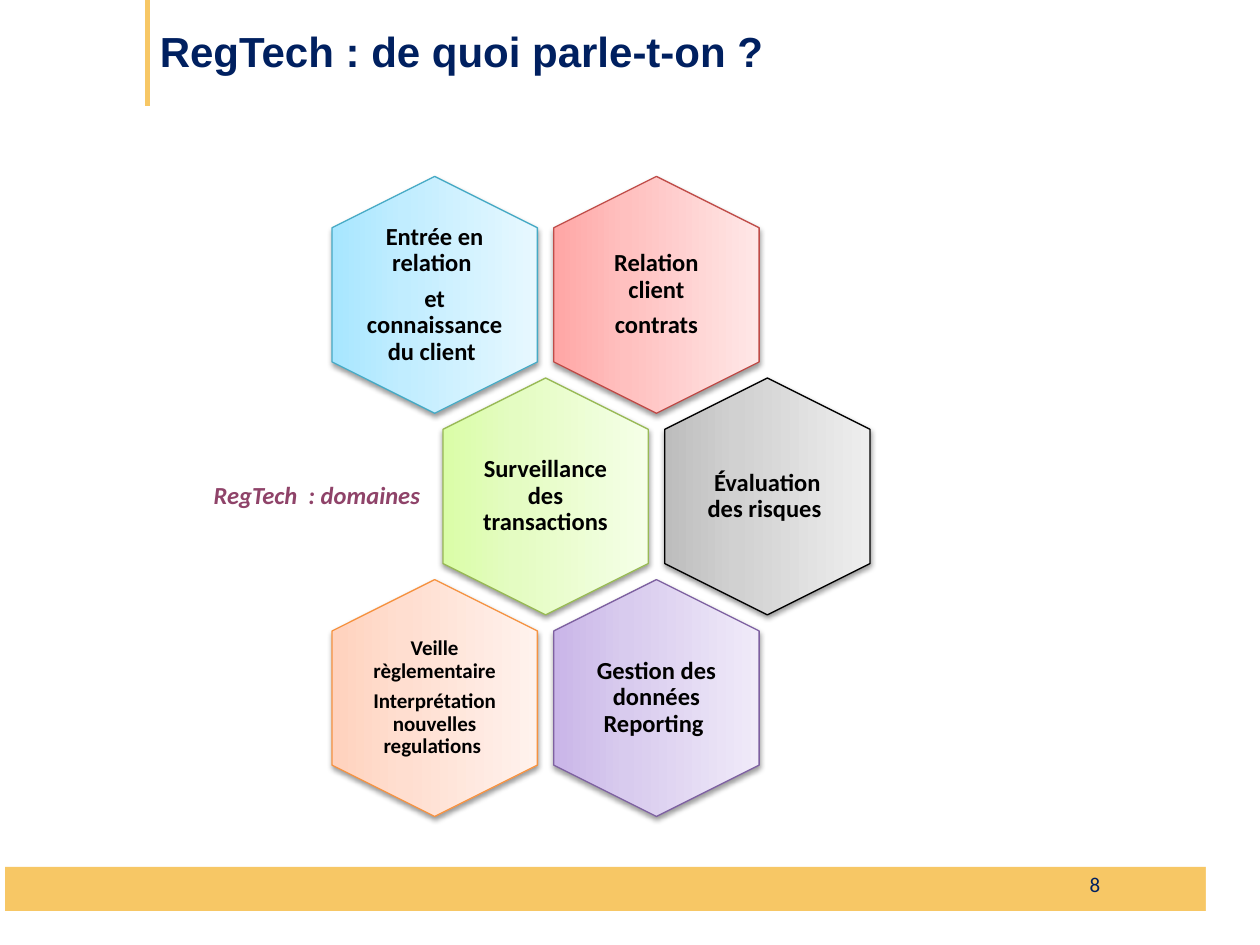
from dataclasses import dataclass

from lxml import etree
from pptx import Presentation
from pptx import util as u
from pptx.dml.color import RGBColor
from pptx.enum import shapes, text
from pptx.oxml import parse_xml
from pptx.oxml.ns import nsdecls, qn


@dataclass(frozen=True)
class Theme:
    gold: str = "F7C765"
    navy: str = "002060"
    plum: str = "8F4369"
    black: str = "000000"
    white: str = "FFFFFF"
    title_font: str = "Arial"
    body_font: str = "Calibri"
    title_size: int = 24
    body_size: int = 14
    small_size: int = 12


class SlideBuilder:
    def __init__(self, slide, theme):
        self.slide = slide
        self.theme = theme

    def rectangle(self, left, top, width, height, color):
        shape = self.slide.shapes.add_shape(
            shapes.MSO_SHAPE.RECTANGLE, *map(u.Inches, (left, top, width, height)))
        shape.shadow.inherit = False
        shape.fill.solid()
        shape.fill.fore_color.rgb = RGBColor.from_string(color)
        shape.line.fill.background()

    def line(self, start, end, color, weight):
        connector = self.slide.shapes.add_connector(
            shapes.MSO_CONNECTOR.STRAIGHT, *map(u.Inches, start + end))
        connector.line.color.rgb = RGBColor.from_string(color)
        connector.line.width = u.Pt(weight)
        etree.SubElement(connector._element.spPr, qn("a:effectLst"))

    def text_box(self, left, top, width, height, paragraphs, size, color,
                 align=text.PP_ALIGN.LEFT, font=None, bold=False, italic=False,
                 inset=None, spacing=None, after=0):
        box = self.slide.shapes.add_textbox(*map(u.Inches, (left, top, width, height)))
        frame = box.text_frame
        frame.word_wrap = True
        frame.vertical_anchor = text.MSO_ANCHOR.MIDDLE
        if inset is not None:
            frame.margin_left = frame.margin_right = u.Inches(inset)
            frame.margin_top = frame.margin_bottom = u.Inches(inset)
        frame.text = "\n".join(paragraphs)
        for paragraph in frame.paragraphs:
            paragraph.alignment = align
            paragraph.line_spacing = spacing
            paragraph.space_after = u.Pt(after)
            paragraph.font.name = font or self.theme.body_font
            paragraph.font.size = u.Pt(size)
            paragraph.font.bold = bold
            paragraph.font.italic = italic
            paragraph.font.color.rgb = RGBColor.from_string(color)

    def diagram_text(self, left, top, width, height, paragraphs, size, color, **style):
        """Bold text with the tight line spacing shared by the whole diagram."""
        self.text_box(left, top, width, height, paragraphs, size, color,
                      bold=True, spacing=0.9, after=0.35 * size, **style)

    def hexagon(self, center_x, center_y, gradient, outline):
        """Pointy-top hexagon: a preset hexagon turned a quarter."""
        width, height = 1.88, 1.63
        shape = self.slide.shapes.add_shape(
            shapes.MSO_SHAPE.HEXAGON, u.Inches(center_x - width / 2),
            u.Inches(center_y - height / 2), u.Inches(width), u.Inches(height))
        shape.rotation = 90
        shape.line.color.rgb = RGBColor.from_string(outline)
        shape.line.width = u.Pt(0.75)
        shape.shadow.inherit = False
        properties = shape._element.spPr
        stops = "".join(
            f'<a:gs pos="{position * 1000}"><a:srgbClr val="{color}"/></a:gs>'
            for position, color in zip((0, 35, 100), gradient))
        properties.find(qn("a:prstGeom")).addnext(parse_xml(
            f'<a:gradFill {nsdecls("a")} rotWithShape="1"><a:gsLst>{stops}</a:gsLst>'
            '<a:lin ang="16200000" scaled="1"/></a:gradFill>'))
        properties.find(qn("a:effectLst")).append(parse_xml(
            f'<a:outerShdw {nsdecls("a")} blurRad="{u.Pt(3.1)}" dist="{u.Pt(1.6)}" '
            f'dir="5400000" rotWithShape="0"><a:srgbClr val="{self.theme.black}">'
            '<a:alpha val="38000"/></a:srgbClr></a:outerShdw>'))

    def domain(self, center_x, center_y, paragraphs, gradient, outline, size, inset):
        width, height = 1.13, 1.29
        self.hexagon(center_x, center_y, gradient, outline)
        self.diagram_text(center_x - width / 2, center_y - height / 2, width, height,
                          paragraphs, size, self.theme.black,
                          align=text.PP_ALIGN.CENTER, inset=inset)


def main():
    theme = Theme()
    presentation = Presentation()
    presentation.slide_width, presentation.slide_height = u.Inches(10), u.Inches(7.5)
    slide = presentation.slides.add_slide(presentation.slide_layouts[6])
    builder = SlideBuilder(slide, theme)

    builder.rectangle(0.04, 6.88, 9.76, 0.35, theme.gold)
    builder.line((1.17, 0), (1.17, 0.84), theme.gold, 2.75)
    builder.rectangle(9.57, 6.74, 0.28, 0.66, theme.white)
    builder.text_box(1.17, -0.03, 7.24, 0.86, ["RegTech : de quoi parle-t-on ?"],
                     theme.title_size, theme.navy, font=theme.title_font, bold=True)

    # Column, row, paragraphs, gradient, outline, text size, inset
    body, small = theme.body_size, theme.small_size
    domains = [
        (1, 0, ["Relation client", "contrats"],
         ("FFA6A5", "FFC0BF", "FFE7E7"), "BF4C48", body, 0.06),
        (0, 0, ["Entrée en relation ", "et connaissance du client "],
         ("A7E6FF", "C1EDFF", "E7F8FF"), "46AAC5", body, 0),
        (0, 1, ["Surveillance des transactions "],
         ("DAFDA7", "E4FCC2", "F5FFE7"), "98B955", body, 0.06),
        (1, 1, ["Évaluation des risques "],
         ("BDBDBD", "D1D1D1", "EEEEEE"), "000000", body, 0),
        (1, 2, ["Gestion des données Reporting "],
         ("C9B5E8", "D8CBEE", "F0EAF9"), "7D60A0", body, 0.06),
        (0, 2, ["Veille règlementaire", "Interprétation nouvelles regulations "],
         ("FFD2BD", "FFDED0", "FFF2ED"), "F69240", small, 0),
    ]
    column_pitch, row_pitch = 1.76, 1.6
    for column, row, *details in domains:
        # Odd rows sit half a column to the right, as in a honeycomb
        center_x = 3.45 + (column + row % 2 / 2) * column_pitch
        center_y = 2.34 + row * row_pitch
        builder.domain(center_x, center_y, *details)

    builder.diagram_text(1.41, 3.38, 2.03, 1.13, ["RegTech  : domaines "], body,
                         theme.plum, align=text.PP_ALIGN.RIGHT, italic=True, inset=0.06)
    builder.text_box(6.5, 6.82, 2.33, 0.4, ["8"], small, theme.navy,
                     align=text.PP_ALIGN.RIGHT)
    presentation.save("out.pptx")


if __name__ == "__main__":
    main()
